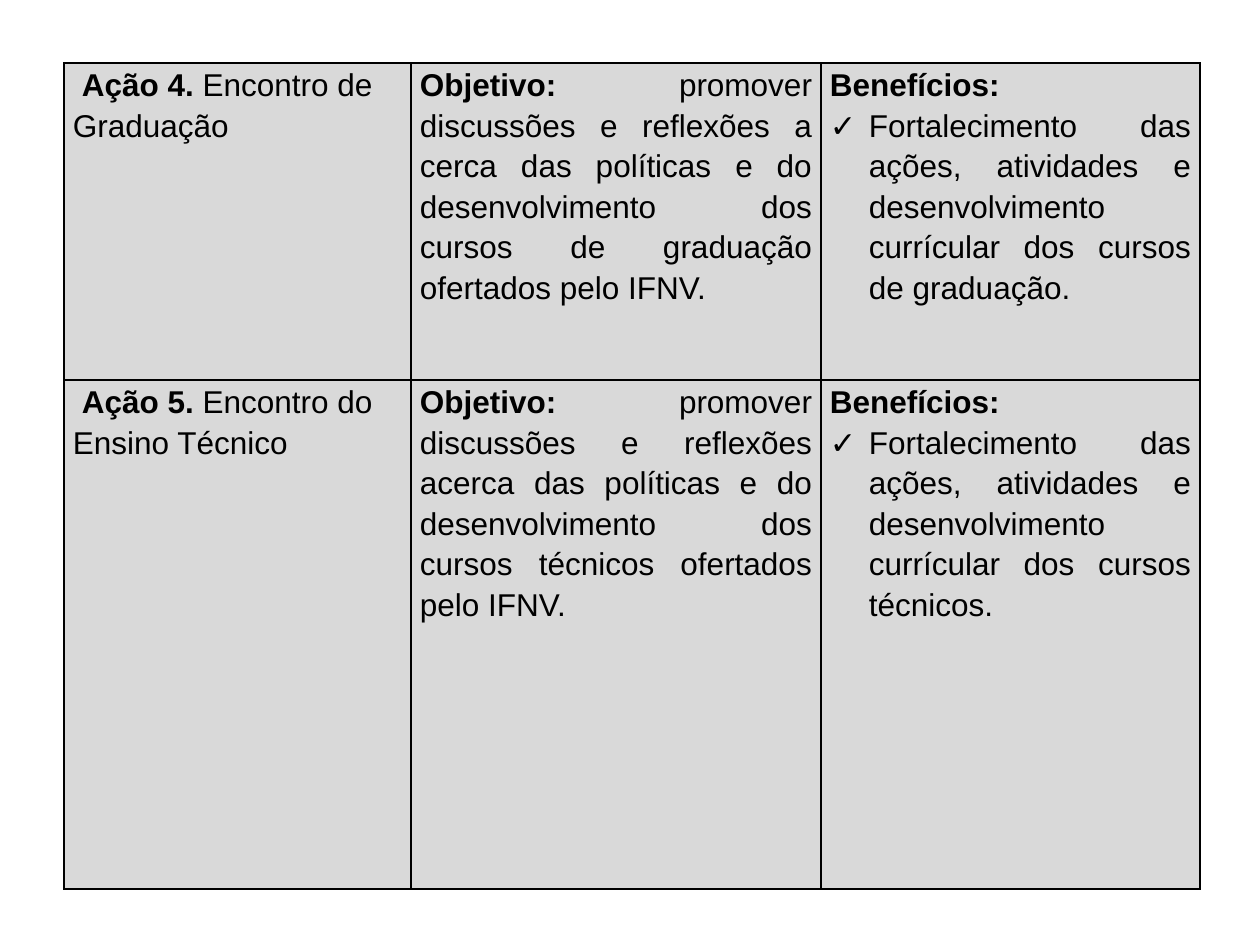
"""Build a slide with a table of institutional actions, objectives and benefits."""
from lxml import etree
from pptx import Presentation
from pptx import util as u
from pptx.dml.color import RGBColor
from pptx.enum import text
from pptx.oxml.ns import qn

COLORS = {"ink": "000000", "cell": "D9D9D9"}
FONT = "Arial"
COLUMNS = [347, 410, 379]
ROWS = [317, 509]
INSET = 9
BULLET_INDENT = 39

ACTIONS = [
    (
        ("Ação 4.", "Encontro de Graduação"),
        "promover discussões e reflexões a cerca das políticas e do "
        "desenvolvimento dos cursos de graduação ofertados pelo IFNV.",
        "Fortalecimento das ações, atividades e desenvolvimento currícular "
        "dos cursos de graduação.",
    ),
    (
        ("Ação 5.", "Encontro do Ensino Técnico"),
        "promover discussões e reflexões acerca das políticas e do "
        "desenvolvimento dos cursos técnicos ofertados pelo IFNV.",
        "Fortalecimento das ações, atividades e desenvolvimento currícular "
        "dos cursos técnicos.",
    ),
]


def px(length):
    return u.Emu(round(length * 914400 / 126))


def color(name):
    return RGBColor.from_string(COLORS[name])


def add_run(paragraph, words, bold=False):
    run = paragraph.add_run()
    run.text = words
    run.font.name = FONT
    run.font.size = u.Pt(18)
    run.font.bold = bold
    run.font.color.rgb = color("ink")


def format_paragraph(paragraph, justified=True, margin=0, indent=0):
    paragraph.line_spacing = 1.15
    if justified:
        paragraph.alignment = text.PP_ALIGN.JUSTIFY
    properties = paragraph._p.get_or_add_pPr()
    properties.set("marL", str(px(margin)))
    properties.set("indent", str(px(indent)))
    return properties


def add_bullet(properties):
    etree.SubElement(properties, qn("a:buFont"), typeface=FONT)
    etree.SubElement(properties, qn("a:buChar"), char="✓")


def style_cell(cell):
    cell.margin_left = cell.margin_right = px(INSET)
    cell.margin_top = cell.margin_bottom = 0
    properties = cell._tc.get_or_add_tcPr()
    for side in ("lnL", "lnR", "lnT", "lnB"):
        line = etree.SubElement(properties, qn(f"a:{side}"), w=str(u.Pt(1)))
        fill = etree.SubElement(line, qn("a:solidFill"))
        etree.SubElement(fill, qn("a:srgbClr"), val=COLORS["ink"])
    cell.fill.solid()
    cell.fill.fore_color.rgb = color("cell")


def fill_action(cell, label, title):
    paragraph = cell.text_frame.paragraphs[0]
    format_paragraph(paragraph, justified=False, indent=INSET)
    add_run(paragraph, label, bold=True)
    add_run(paragraph, f" {title}")


def fill_objective(cell, objective):
    paragraph = cell.text_frame.paragraphs[0]
    format_paragraph(paragraph)
    add_run(paragraph, "Objetivo: ", bold=True)
    add_run(paragraph, objective)


def fill_benefits(cell, benefit):
    heading = cell.text_frame.paragraphs[0]
    format_paragraph(heading)
    add_run(heading, "Benefícios:", bold=True)
    item = cell.text_frame.add_paragraph()
    add_bullet(format_paragraph(item, margin=BULLET_INDENT, indent=-BULLET_INDENT))
    add_run(item, benefit)


def add_action_table(slide):
    shape = slide.shapes.add_table(
        len(ROWS), len(COLUMNS), px(64), px(63), px(sum(COLUMNS)), px(sum(ROWS))
    )
    table = shape.table
    table.first_row = table.horz_banding = False
    for column, width in zip(table.columns, COLUMNS):
        column.width = px(width)
    for row, height, (action, objective, benefit) in zip(table.rows, ROWS, ACTIONS):
        row.height = px(height)
        for cell in row.cells:
            style_cell(cell)
        action_cell, objective_cell, benefits_cell = row.cells
        fill_action(action_cell, *action)
        fill_objective(objective_cell, objective)
        fill_benefits(benefits_cell, benefit)


def main():
    presentation = Presentation()
    presentation.slide_width = px(1260)
    presentation.slide_height = px(945)
    slide = presentation.slides.add_slide(presentation.slide_layouts[6])
    add_action_table(slide)
    presentation.save("out.pptx")


if __name__ == "__main__":
    main()
